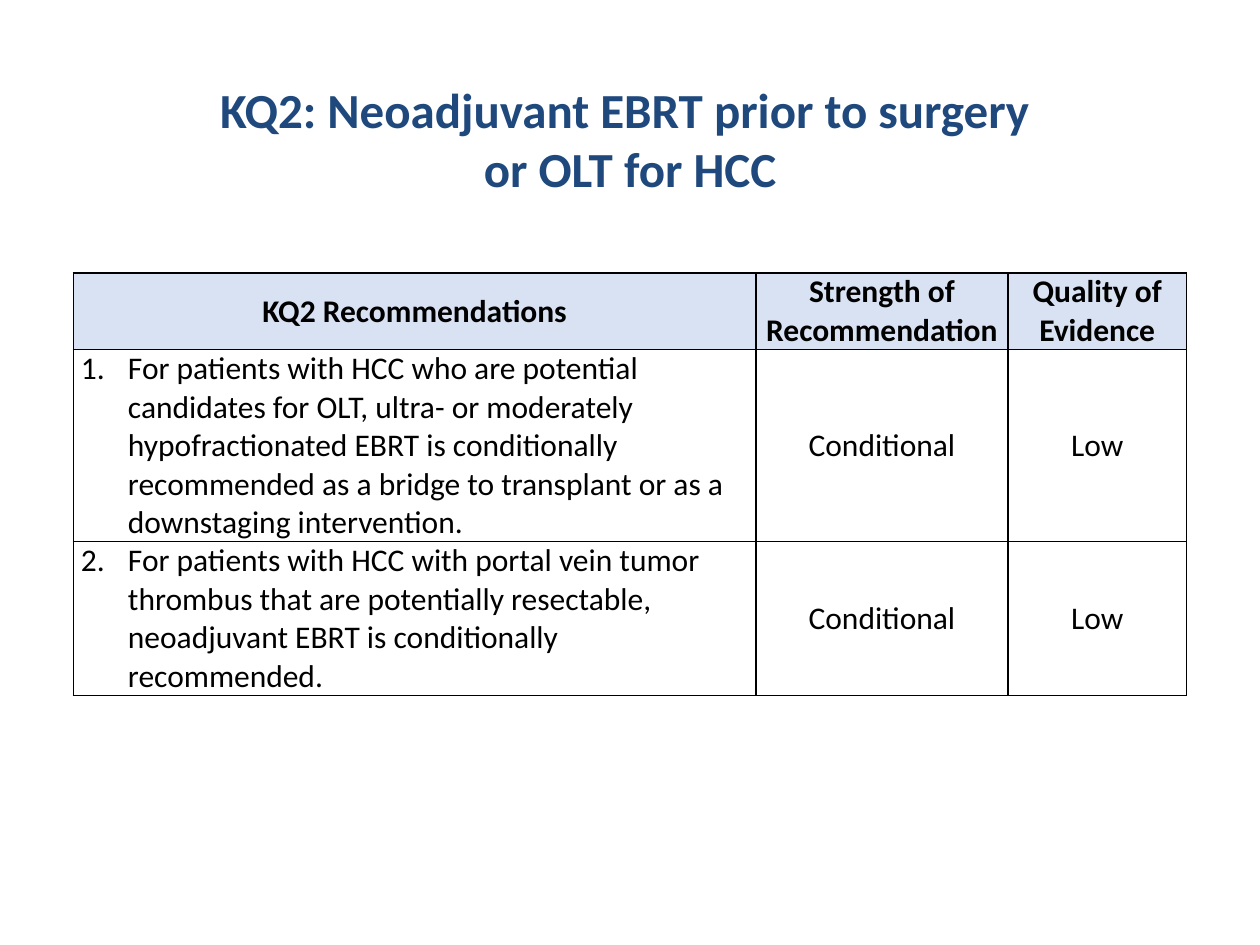
import pptx
import pptx.dml.color
import pptx.enum.text
import pptx.oxml.ns
import pptx.util
from lxml import etree

Cm, Pt = pptx.util.Cm, pptx.util.Pt
CENTER = pptx.enum.text.PP_ALIGN.CENTER
MIDDLE = pptx.enum.text.MSO_ANCHOR.MIDDLE

TITLE = "KQ2: Neoadjuvant EBRT prior to surgery \vor OLT for HCC"
HEADER = ["KQ2 Recommendations", "Strength of\nRecommendation", "Quality of\nEvidence"]
RECOMMENDATIONS = [
    ("For patients with HCC who are potential candidates for OLT, ultra- or "
     "moderately hypofractionated EBRT is conditionally recommended as a bridge "
     "to transplant or as a downstaging intervention.", "Conditional", "Low"),
    ("For patients with HCC with portal vein tumor thrombus that are potentially "
     "resectable, neoadjuvant EBRT is conditionally recommended.", "Conditional", "Low"),
]
COL_WIDTHS = [13.76, 5.08, 3.6]
ROW_HEIGHTS = [1.55, 3.87, 3.1]
INDENT = Cm(0.95)


def color(value):
    return pptx.dml.color.RGBColor.from_string(value)


def add_xml(parent, tag, **attrs):
    return etree.SubElement(parent, pptx.oxml.ns.qn(tag), attrs)


def format_text(p, size, hue, bold):
    for r in p.runs:
        r.font.name, r.font.size, r.font.bold = "Calibri", Pt(size), bold
        r.font.color.rgb = color(hue)


def add_borders(cell):
    tcPr = cell._tc.get_or_add_tcPr()
    for side in "LRTB":
        ln = add_xml(tcPr, f"a:ln{side}", w=str(Pt(1)))
        add_xml(add_xml(ln, "a:solidFill"), "a:srgbClr", val="000000")


def number_paragraph(p, number):
    pPr = p._p.get_or_add_pPr()
    pPr.set("marL", str(INDENT))
    pPr.set("indent", str(-INDENT))
    add_xml(pPr, "a:buFont", typeface="+mj-lt")
    add_xml(pPr, "a:buAutoNum", type="arabicPeriod", startAt=str(number))


def fill_cell(cell, text, row, col):
    header = row == 0
    numbered = not header and col == 0
    cell.margin_left = cell.margin_right = Cm(0.15)
    cell.margin_top = cell.margin_bottom = 0
    add_borders(cell)
    if header:
        cell.fill.solid()
        cell.fill.fore_color.rgb = color("D9E2F3")
    else:
        cell.fill.background()
    if not numbered:
        cell.vertical_anchor = MIDDLE
    cell.text_frame.text = text
    for p in cell.text_frame.paragraphs:
        if numbered:
            number_paragraph(p, row)
        else:
            p.alignment = CENTER
        format_text(p, 18, "000000", header)


prs = pptx.Presentation()
prs.slide_width, prs.slide_height = Cm(25.4), Cm(19.05)
s = prs.slides.add_slide(prs.slide_layouts[6])

tf = s.shapes.add_textbox(Cm(0.85), Cm(1.48), Cm(23.7), Cm(1.57)).text_frame
tf.word_wrap = True
tf.text = TITLE
p = tf.paragraphs[0]
p.alignment = CENTER
format_text(p, 28, "1F497D", True)

rows = [HEADER, *RECOMMENDATIONS]
table = s.shapes.add_table(len(rows), len(HEADER), Cm(1.48), Cm(5.5),
                           Cm(sum(COL_WIDTHS)), Cm(sum(ROW_HEIGHTS))).table
for column, width in zip(table.columns, COL_WIDTHS):
    column.width = Cm(width)
for i, (texts, height) in enumerate(zip(rows, ROW_HEIGHTS)):
    table.rows[i].height = Cm(height)
    for j, text in enumerate(texts):
        fill_cell(table.cell(i, j), text, i, j)

prs.save("out.pptx")
